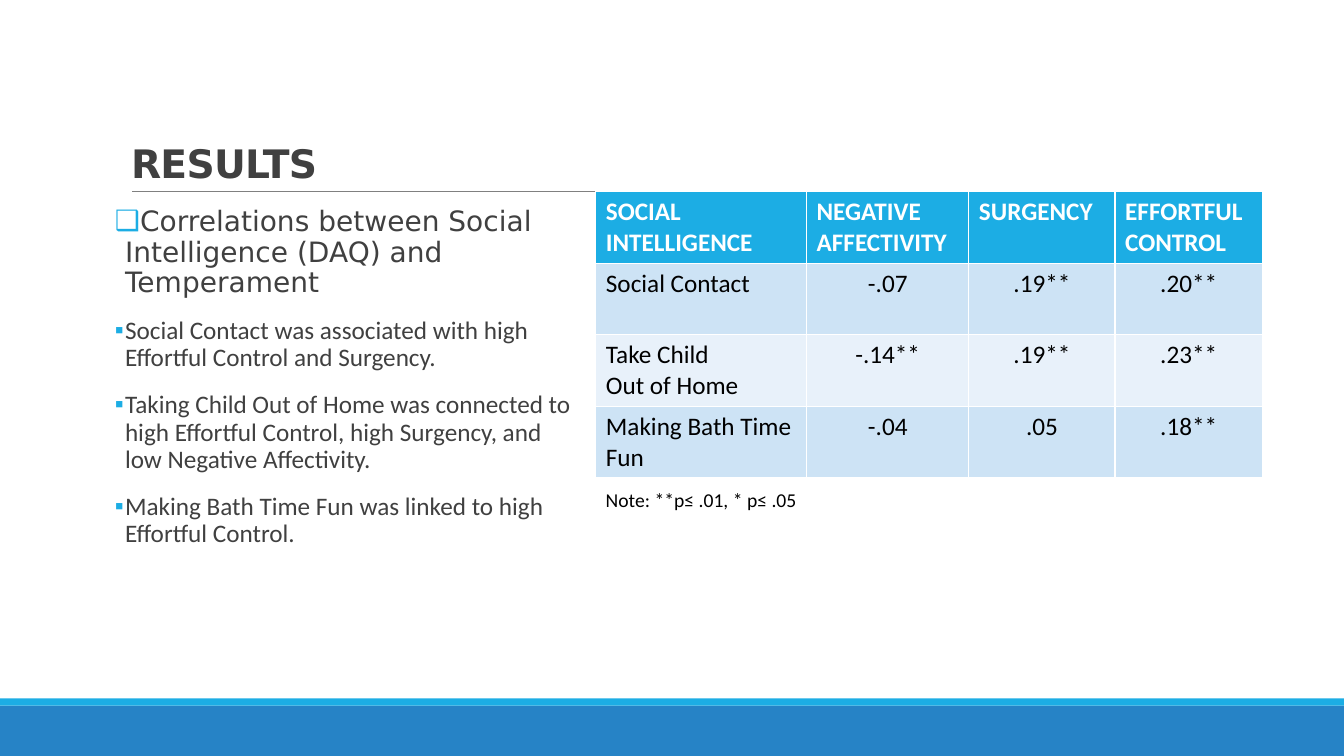
from lxml import etree
from pptx import Presentation
from pptx import util as u
from pptx.dml.color import RGBColor
from pptx.enum import shapes, text
from pptx.oxml.ns import qn

BLUE, GREY, WHITE, BLACK = "1CADE4", "404040", "FFFFFF", "000000"


def color(value):
    return RGBColor.from_string(value)


def style(para, size, font, value, bold=False):
    for span in para.runs:
        formats = {"size": u.Pt(size), "name": font, "bold": bold}
        for name, setting in formats.items():
            setattr(span.font, name, setting)
        span.font.color.rgb = color(value)


deck = Presentation()
deck.slide_width, deck.slide_height = u.Inches(13.33), u.Inches(7.5)
page = deck.slides.add_slide(deck.slide_layouts[1])
title, body = page.placeholders

# Bottom bands
for top, height, fill in [(7, 0.5, "2683C6"), (6.93, 0.07, BLUE)]:
    band = page.shapes.add_shape(shapes.MSO_SHAPE.RECTANGLE, 0, u.Inches(top),
                                 deck.slide_width, u.Inches(height))
    band.shadow.inherit = False
    band.fill.solid()
    band.fill.fore_color.rgb = color(fill)
    band.line.fill.background()

# Rule under the title
rule = page.shapes.add_connector(shapes.MSO_CONNECTOR.STRAIGHT, u.Inches(1.31), u.Inches(1.9),
                                 u.Inches(12.21), u.Inches(1.9))
rule.line.color.rgb = color("808080")
rule.line.width = u.Pt(0.5)
etree.SubElement(rule._element.spPr, qn("a:effectLst"))

# Title and body frames
for holder, box, anchor in [
    (title, (1.2, 0.31, 11, 1.59), text.MSO_ANCHOR.BOTTOM),
    (body, (1.14, 2.01, 4.58, 4.4), text.MSO_ANCHOR.TOP),
]:
    holder.left, holder.top, holder.width, holder.height = map(u.Inches, box)
    frame = {"vertical_anchor": anchor, "word_wrap": True, "auto_size": text.MSO_AUTO_SIZE.NONE}
    for name, setting in frame.items():
        setattr(holder.text_frame, name, setting)

# Title
title.text_frame.text = "RESULTS"
para = title.text_frame.paragraphs[0]
para.alignment = text.PP_ALIGN.LEFT
para.line_spacing = 0.85
style(para, 28, "DejaVu Sans", GREY, True)
para.runs[0].font._element.set("spc", "-50")

# Findings
findings = [
    ("❑", 20, "DejaVu Sans", "Correlations between Social Intelligence (DAQ) and Temperament"),
    ("▪", 18, "Calibri", "Social Contact was associated with high Effortful Control and Surgency."),
    ("▪", 18, "Calibri", "Taking Child Out of Home was connected to high Effortful Control, "
                         "high Surgency, and low Negative Affectivity."),
    ("▪", 18, "Calibri", "Making Bath Time Fun was linked to high Effortful Control."),
]
body.text_frame.margin_left = body.text_frame.margin_right = 0
body.text_frame.text = "\n".join(finding[-1] for finding in findings)
for para, (bullet, size, font, _) in zip(body.text_frame.paragraphs, findings):
    spacing = {"line_spacing": 0.9, "space_before": u.Pt(12), "space_after": u.Pt(2),
               "alignment": text.PP_ALIGN.LEFT}
    for name, setting in spacing.items():
        setattr(para, name, setting)
    style(para, size, font, GREY)
    props = para._p.get_or_add_pPr()
    props.set("marL", str(u.Inches(0.1)))
    props.set("indent", str(-u.Inches(0.1)))
    tint = etree.SubElement(props, qn("a:buClr"))
    etree.SubElement(tint, qn("a:srgbClr"), val=BLUE)
    etree.SubElement(props, qn("a:buChar"), char=bullet)

# Correlation table
rows = [
    ["SOCIAL INTELLIGENCE", "NEGATIVE AFFECTIVITY", "SURGENCY", "EFFORTFUL CONTROL"],
    ["Social Contact", "-.07", ".19**", ".20**"],
    ["Take Child\nOut of Home", "-.14**", ".19**", ".23**"],
    ["Making Bath Time Fun", "-.04", ".05", ".18**"],
]
fills = [BLUE, "CDE3F5", "E8F1FA", "CDE3F5"]
table = page.shapes.add_table(4, 4, u.Inches(5.91), u.Inches(1.9),
                              u.Inches(6.61), u.Inches(2.84)).table
for column, width in zip(table.columns, [2.09, 1.61, 1.45, 1.46]):
    column.width = u.Inches(width)
for r, row in enumerate(rows):
    for c, words in enumerate(row):
        cell = table.cell(r, c)
        cell.text = words
        cell.fill.solid()
        cell.fill.fore_color.rgb = color(fills[r])
        for para in cell.text_frame.paragraphs:
            style(para, 18, "Calibri", BLACK if r else WHITE, r == 0)
            if r and c:
                para.alignment = text.PP_ALIGN.CENTER

# Significance note
note = page.shapes.add_textbox(u.Inches(5.91), u.Inches(4.79), u.Inches(2.16), u.Inches(0.34))
note.text_frame.word_wrap = False
note.text_frame.text = "Note: **p≤ .01, * p≤ .05"
style(note.text_frame.paragraphs[0], 14, "Calibri", BLACK)

deck.save("out.pptx")
